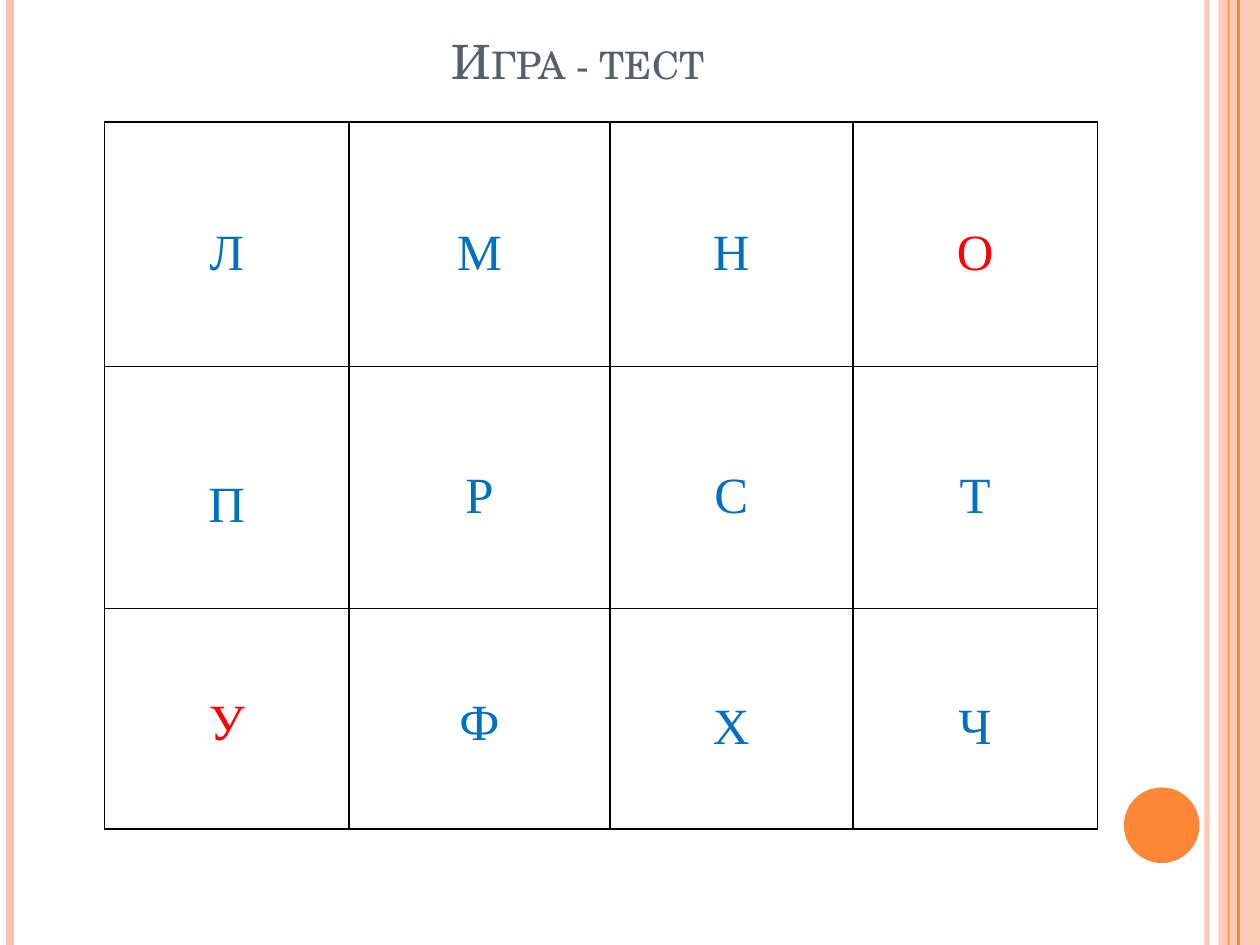
from dataclasses import dataclass

from lxml.etree import SubElement
from pptx import Presentation
from pptx.dml.color import RGBColor
from pptx.dml.fill import FillFormat
from pptx.enum.shapes import MSO_CONNECTOR, MSO_SHAPE
from pptx.enum.text import MSO_ANCHOR, MSO_AUTO_SIZE, PP_ALIGN
from pptx.oxml.ns import qn
from pptx.slide import Slide
from pptx.table import _Cell as Cell
from pptx.util import Inches, Pt

WIDTH, HEIGHT = 10, 7.5
PEACH, ORANGE, SLATE = "FEC3AE", "FE8637", "575F6D"
BLUE, RED, BLACK = "0070C0", "FF0000", "000000"
COLUMNS = (1.94, 2.07, 1.93, 1.94)
ROWS = (1.94, 1.92, 1.75)


@dataclass(frozen=True)
class Stripe:
    """A full-height vertical line."""
    x: float
    color: str
    weight: float
    opacity: int = 100


@dataclass(frozen=True)
class Letter:
    """A letter of the game; drop is the inset that lowers it in its cell."""
    text: str
    color: str = BLUE
    drop: float = 0.07


STRIPES = (
    Stripe(9.58, PEACH, 3, 93),
    Stripe(0.08, PEACH, 4.5),
    Stripe(9.83, ORANGE, 1.5),
    Stripe(9.75, ORANGE, 0.75),
)
LETTERS = (
    (Letter("Л"), Letter("М"), Letter("Н"), Letter("О", RED)),
    (Letter("П", drop=0.21), Letter("Р"), Letter("С"), Letter("Т")),
    (Letter("У", RED, 0), Letter("Ф", drop=0), Letter("Х"), Letter("Ч")),
)


def rgb(color: str) -> RGBColor:
    return RGBColor.from_string(color)


def paint(fill: FillFormat, color: str, opacity: int = 100) -> None:
    fill.solid()
    fill.fore_color.rgb = rgb(color)
    if opacity < 100:
        srgb = fill._xPr.find(".//" + qn("a:srgbClr"))
        SubElement(srgb, qn("a:alpha"), val=str(opacity * 1000))


def draw_stripe(slide: Slide, stripe: Stripe) -> None:
    x = Inches(stripe.x)
    line = slide.shapes.add_connector(MSO_CONNECTOR.STRAIGHT, x, 0, x, Inches(HEIGHT))
    line.line.width = Pt(stripe.weight)
    paint(line.line.fill, stripe.color, stripe.opacity)
    SubElement(line._element.spPr, qn("a:effectLst"))


def draw_shape(slide: Slide, kind: MSO_SHAPE, box: tuple[float, ...],
               color: str, opacity: int = 100) -> None:
    shape = slide.shapes.add_shape(kind, *map(Inches, box))
    shape.shadow.inherit = False
    shape.line.fill.background()
    paint(shape.fill, color, opacity)


def write_title(slide: Slide, text: str) -> None:
    title = slide.shapes.title
    title.left, title.top, title.width, title.height = map(Inches, (0.51, 0.3, 8.16, 0.46))
    frame = title.text_frame
    frame.text = text
    frame.auto_size = MSO_AUTO_SIZE.NONE
    frame.vertical_anchor = MSO_ANCHOR.BOTTOM
    heading = frame.paragraphs[0]
    heading.alignment = PP_ALIGN.CENTER
    heading.font.name = "TeX Gyre Schola"
    heading.font.size = Pt(27)
    heading.font.color.rgb = rgb(SLATE)
    heading.runs[0].font._element.set("cap", "small")


def add_borders(cell: Cell) -> None:
    properties = cell._tc.get_or_add_tcPr()
    for position, side in enumerate(("lnL", "lnR", "lnT", "lnB")):
        border = properties.makeelement(qn(f"a:{side}"), {"w": str(Pt(1))})
        solid = SubElement(border, qn("a:solidFill"))
        SubElement(solid, qn("a:srgbClr"), val=BLACK)
        properties.insert(position, border)


def write_letter(cell: Cell, letter: Letter) -> None:
    cell.fill.background()
    add_borders(cell)
    cell.margin_left = cell.margin_right = Inches(0.02)
    cell.margin_top, cell.margin_bottom = Inches(letter.drop), 0
    cell.vertical_anchor = MSO_ANCHOR.MIDDLE
    cell.text = letter.text
    paragraph = cell.text_frame.paragraphs[0]
    paragraph.alignment = PP_ALIGN.CENTER
    paragraph.line_spacing = 1.15
    paragraph.font.name = "Times New Roman"
    paragraph.font.size = Pt(29)
    paragraph.font.color.rgb = rgb(letter.color)


def draw_board(slide: Slide) -> None:
    box = map(Inches, (0.83, 0.97, sum(COLUMNS), sum(ROWS)))
    board = slide.shapes.add_table(len(ROWS), len(COLUMNS), *box).table
    board.first_row = board.horz_banding = False
    for column, width in zip(board.columns, COLUMNS):
        column.width = Inches(width)
    for row, height, letters in zip(board.rows, ROWS, LETTERS):
        row.height = Inches(height)
        for cell, letter in zip(row.cells, letters):
            write_letter(cell, letter)


def main() -> None:
    deck = Presentation()
    deck.slide_width, deck.slide_height = Inches(WIDTH), Inches(HEIGHT)
    slide = deck.slides.add_slide(deck.slide_layouts[5])
    draw_shape(slide, MSO_SHAPE.RECTANGLE, (9.67, 0, 0.33, HEIGHT), PEACH, 87)
    for stripe in STRIPES:
        draw_stripe(slide, stripe)
    draw_shape(slide, MSO_SHAPE.OVAL, (8.92, 6.25, 0.6, 0.6), ORANGE)
    write_title(slide, "Игра - тест")
    draw_board(slide)
    deck.save("out.pptx")


if __name__ == "__main__":
    main()
